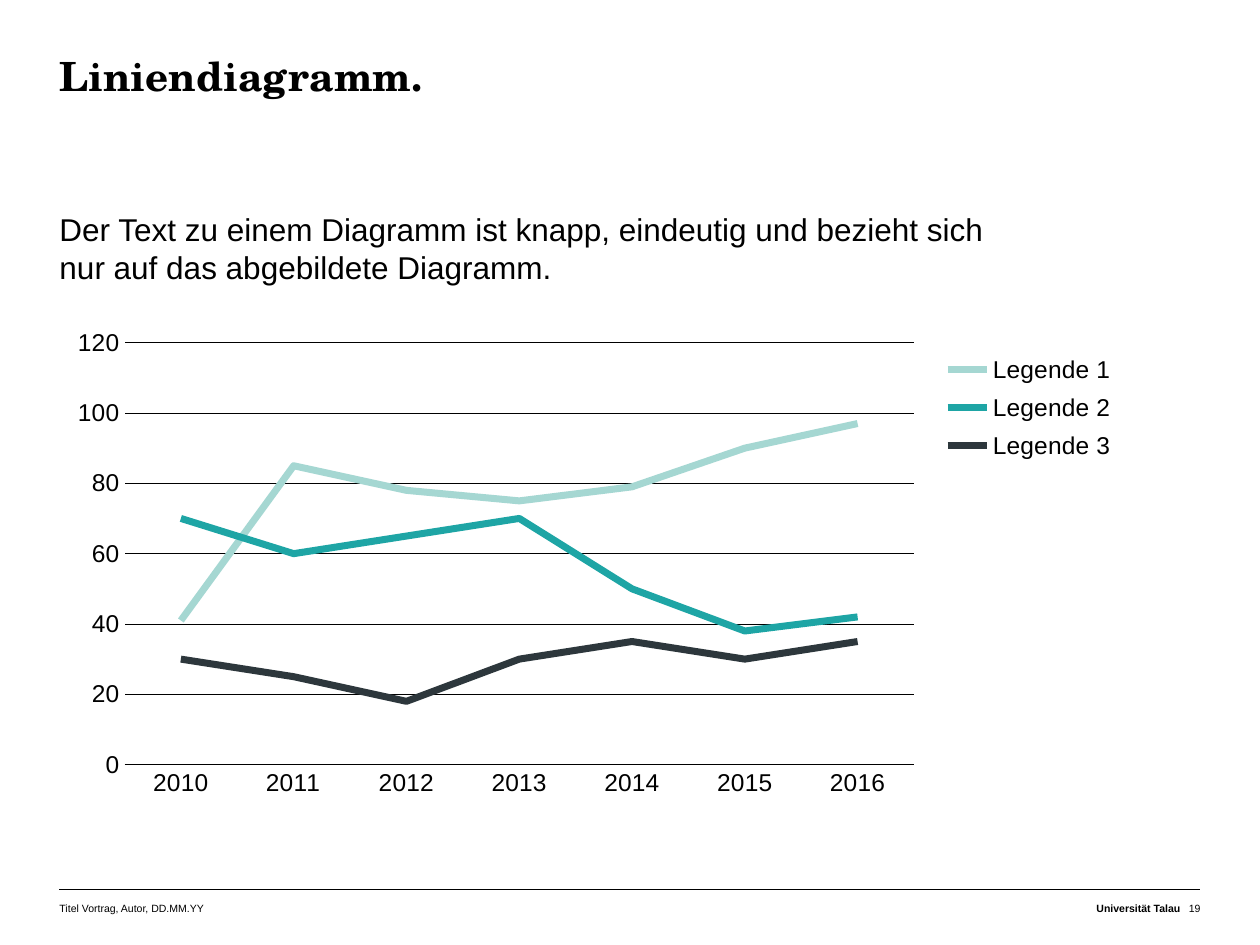
from lxml.etree import SubElement
from pptx import Presentation
from pptx.chart.data import CategoryChartData
from pptx.dml.color import RGBColor
from pptx.enum.chart import XL_CHART_TYPE, XL_LEGEND_POSITION, XL_MARKER_STYLE, XL_TICK_MARK
from pptx.enum.shapes import MSO_CONNECTOR
from pptx.enum.text import MSO_ANCHOR, MSO_AUTO_SIZE, PP_ALIGN
from pptx.oxml import parse_xml
from pptx.oxml.ns import nsdecls, qn
from pptx.util import Pt

BLACK = "000000"
LEFT, RIGHT = 34, 686
WIDTH = RIGHT - LEFT
FOOTER_TOP = 514

YEARS = ["2010", "2011", "2012", "2013", "2014", "2015", "2016"]
SERIES = [
    ("Legende 1", "A5D7D2", [41, 85, 78, 75, 79, 90, 97]),
    ("Legende 2", "1EA5A5", [70, 60, 65, 70, 50, 38, 42]),
    ("Legende 3", "2D373C", [30, 25, 18, 30, 35, 30, 35]),
]


def color(hex_string):
    return RGBColor.from_string(hex_string)


def place(shape, left, top, width, height):
    shape.left, shape.top = Pt(left), Pt(top)
    shape.width, shape.height = Pt(width), Pt(height)


def style_font(font, size, name="Arial", bold=False):
    font.size, font.name, font.bold = Pt(size), name, bold
    font.color.rgb = color(BLACK)


def style_line(line, width, hex_string=BLACK):
    line.color.rgb = color(hex_string)
    line.width = Pt(width)


def write_text(shape, text, size, name="Arial", bold=False,
               align=PP_ALIGN.LEFT, spacing=None, inset_top=0):
    frame = shape.text_frame
    frame.text = text
    frame.word_wrap = True
    frame.auto_size = MSO_AUTO_SIZE.NONE
    frame.vertical_anchor = MSO_ANCHOR.TOP
    frame.margin_left = frame.margin_right = frame.margin_bottom = 0
    frame.margin_top = Pt(inset_top)
    paragraph = frame.paragraphs[0]
    paragraph.alignment = align
    paragraph.space_before = Pt(0)
    if spacing:
        paragraph.line_spacing = Pt(spacing)
    for run in paragraph.runs:
        style_font(run.font, size, name, bold)


def remove_bullet(paragraph):
    properties = paragraph._p.get_or_add_pPr()
    properties.set("marL", "0")
    properties.set("indent", "0")
    SubElement(properties, qn("a:buNone"))


def add_footer_text(page, text, left, width, align=PP_ALIGN.LEFT, bold=False):
    box = page.shapes.add_textbox(Pt(left), Pt(FOOTER_TOP), Pt(width), Pt(14.4))
    write_text(box, text, 6, bold=bold, align=align, inset_top=1.5)


def add_footer_rule(page):
    y = Pt(508.3)
    rule = page.shapes.add_connector(MSO_CONNECTOR.STRAIGHT, Pt(LEFT), y, Pt(RIGHT), y)
    style_line(rule.line, 0.25)
    SubElement(rule._element.spPr, qn("a:effectLst"))


def set_layout(parent, index, x, y, w, h, inner=False):
    """Position a chart part by fractions of the chart's width and height."""
    for old in parent.findall(qn("c:layout")):
        parent.remove(old)
    target = '<c:layoutTarget val="inner"/>' if inner else ""
    parent.insert(index, parse_xml(
        f'<c:layout {nsdecls("c")}><c:manualLayout>{target}'
        '<c:xMode val="edge"/><c:yMode val="edge"/>'
        f'<c:x val="{x}"/><c:y val="{y}"/><c:w val="{w}"/><c:h val="{h}"/>'
        '</c:manualLayout></c:layout>'))


def style_axes(chart):
    for axis in (chart.category_axis, chart.value_axis):
        axis.major_tick_mark = axis.minor_tick_mark = XL_TICK_MARK.NONE
        style_font(axis.tick_labels.font, 14)
    style_line(chart.category_axis.format.line, 0.5)
    values = chart.value_axis
    values.minimum_scale, values.maximum_scale, values.major_unit = 0, 120, 20
    values.format.line.fill.background()
    values.has_major_gridlines = True
    style_line(values.major_gridlines.format.line, 0.5)


def add_line_chart(page):
    data = CategoryChartData()
    data.categories = YEARS
    for name, _, values in SERIES:
        data.add_series(name, values)
    chart = page.shapes.add_chart(
        XL_CHART_TYPE.LINE, Pt(LEFT), Pt(188), Pt(WIDTH), Pt(275), data).chart
    style_font(chart.font, 14)
    chart.has_title = False
    chart.plots[0].vary_by_categories = False
    style_axes(chart)
    for series, (_, hex_string, _) in zip(chart.plots[0].series, SERIES):
        series.smooth = False
        series.marker.style = XL_MARKER_STYLE.NONE
        style_line(series.format.line, 4, hex_string)
    chart.has_legend = True
    chart.legend.position = XL_LEGEND_POSITION.RIGHT
    chart.legend.include_in_layout = False
    style_font(chart.legend.font, 14)
    chart_xml = chart._chartSpace.find(qn("c:chart"))
    set_layout(chart_xml.find(qn("c:plotArea")), 0, 0.057, 0.024, 0.692, 0.881, inner=True)
    set_layout(chart_xml.find(qn("c:legend")), 1, 0.77, 0.03, 0.16, 0.26)


def main():
    deck = Presentation()
    deck.slide_width, deck.slide_height = Pt(720), Pt(540)
    page = deck.slides.add_slide(deck.slide_layouts[1])
    title, body = page.placeholders

    add_footer_rule(page)
    place(title, LEFT, 32, WIDTH, 60)
    write_text(title, "Liniendiagramm.", 23, "TeX Gyre Schola", bold=True, spacing=25)
    place(body, LEFT, 119.5, WIDTH, 47)
    write_text(body, "Der Text zu einem Diagramm ist knapp, eindeutig und bezieht sich \v"
               "nur auf das abgebildete Diagramm.", 18, spacing=22)
    remove_bullet(body.text_frame.paragraphs[0])
    add_line_chart(page)

    add_footer_text(page, "Titel Vortrag, Autor, DD.MM.YY", LEFT, 170)
    add_footer_text(page, "Universität Talau", 524.5, 150, PP_ALIGN.RIGHT, bold=True)
    add_footer_text(page, "19", 674.5, 11.5, PP_ALIGN.RIGHT)
    deck.save("out.pptx")


if __name__ == "__main__":
    main()
